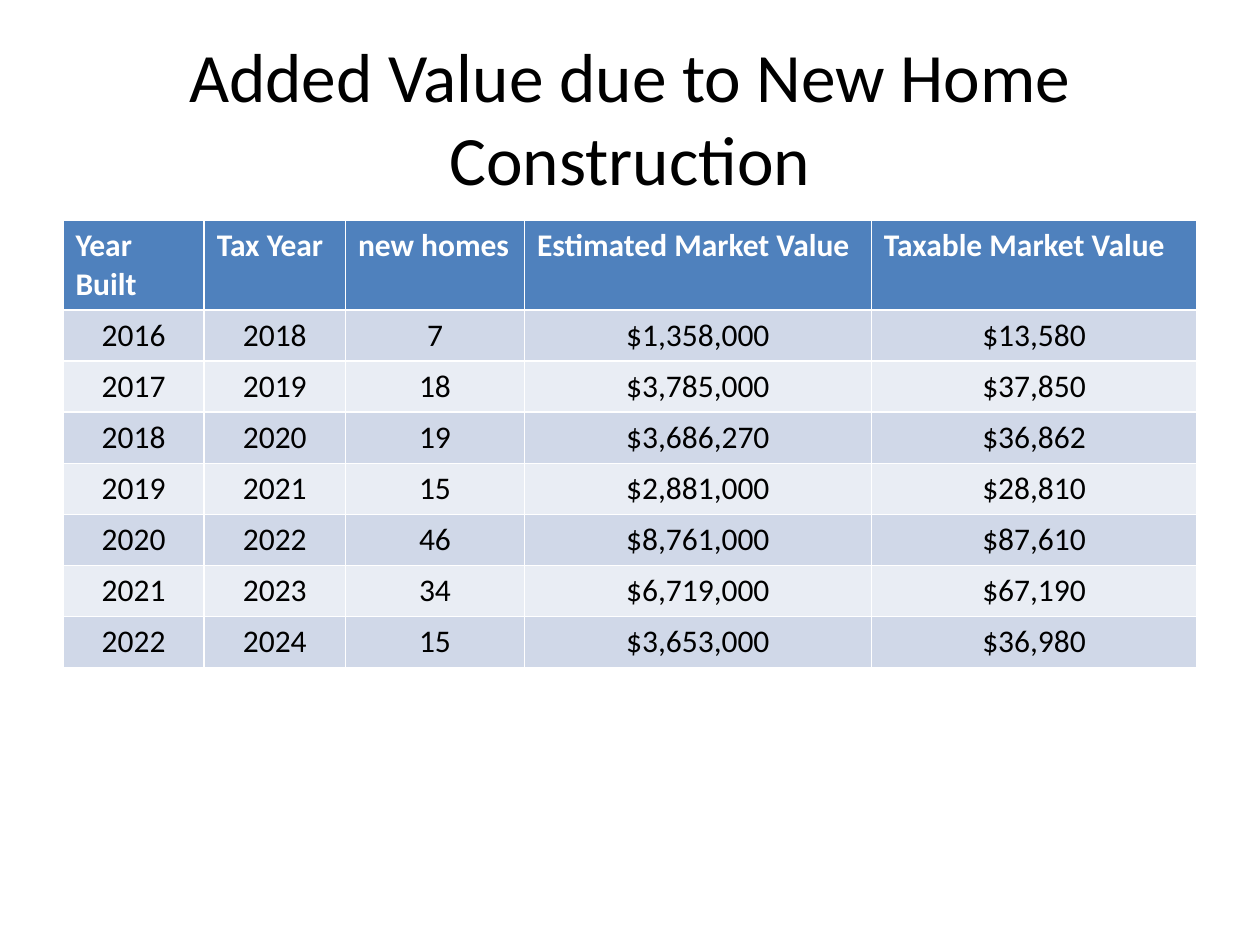
from pptx import Presentation
from pptx.dml.color import RGBColor
from pptx.enum.text import MSO_ANCHOR, PP_ALIGN
from pptx.util import Inches, Pt

LEFT, CENTER = PP_ALIGN.LEFT, PP_ALIGN.CENTER
MIDDLE = MSO_ANCHOR.MIDDLE
BLACK = RGBColor(0x00, 0x00, 0x00)
WHITE = RGBColor(0xFF, 0xFF, 0xFF)
HEADER_BLUE = RGBColor(0x4F, 0x81, 0xBD)
BANDS = (RGBColor(0xD0, 0xD8, 0xE8), RGBColor(0xE9, 0xED, 0xF4))
TITLE_ONLY = 5

HEADINGS = ("Year Built", "Tax Year", "new homes",
            "Estimated Market Value", "Taxable Market Value")
HOMES = (
    ("2016", "2018", "7", "$1,358,000", "$13,580"),
    ("2017", "2019", "18", "$3,785,000", "$37,850"),
    ("2018", "2020", "19", "$3,686,270", "$36,862"),
    ("2019", "2021", "15", "$2,881,000", "$28,810"),
    ("2020", "2022", "46", "$8,761,000", "$87,610"),
    ("2021", "2023", "34", "$6,719,000", "$67,190"),
    ("2022", "2024", "15", "$3,653,000", "$36,980"),
)
COLUMN_WEIGHTS = (1.12, 1.12, 1.42, 2.75, 2.58)


class SlideBuilder:
    """Hold the deck style and the current slide, and add elements to it."""

    font_name = "Calibri"
    title_size = Pt(39.6)
    table_size = Pt(18)

    def __init__(self, width, height):
        """Start a deck of the given size with one title-only slide."""
        self.deck = Presentation()
        self.deck.slide_width, self.deck.slide_height = width, height
        self.page = self.deck.slides.add_slide(self.deck.slide_layouts[TITLE_ONLY])

    def area(self, left, top, width, height):
        """Turn shares of the slide's size into lengths."""
        across, down = self.deck.slide_width, self.deck.slide_height
        return (round(left * across), round(top * down),
                round(width * across), round(height * down))

    def set_text(self, frame, text, size, color, align, bold=False):
        """Put one styled paragraph into a text frame."""
        frame.text = text
        para = frame.paragraphs[0]
        para.alignment = align
        font = para.runs[0].font
        font.name, font.size, font.bold = self.font_name, size, bold
        font.color.rgb = color

    def title(self, text, *shares):
        """Place and fill the title placeholder."""
        box = self.page.shapes.title
        box.left, box.top, box.width, box.height = self.area(*shares)
        box.text_frame.word_wrap = True
        box.text_frame.vertical_anchor = MIDDLE
        self.set_text(box.text_frame, text, self.title_size, BLACK, CENTER)

    def table(self, headings, records, weights, *shares):
        """Add a table with a coloured heading row and banded records."""
        rows = (headings, *records)
        area = self.area(*shares)
        grid = self.page.shapes.add_table(len(rows), len(headings), *area).table
        for column, weight in zip(grid.columns, weights):
            column.width = round(area[2] * weight / sum(weights))
        for row_index, values in enumerate(rows):
            is_heading = row_index == 0
            fill = HEADER_BLUE if is_heading else BANDS[(row_index - 1) % 2]
            color, align = (WHITE, LEFT) if is_heading else (BLACK, CENTER)
            for column_index, value in enumerate(values):
                cell = grid.cell(row_index, column_index)
                cell.fill.solid()
                cell.fill.fore_color.rgb = fill
                self.set_text(cell.text_frame, value, self.table_size,
                              color, align, is_heading)


def main():
    """Build and save the slide on new home construction."""
    builder = SlideBuilder(Inches(10), Inches(7.5))
    builder.title("Added Value due to New Home Construction",
                  0.05, 0.04, 0.9, 1 / 6)
    builder.table(HEADINGS, HOMES, COLUMN_WEIGHTS, 0.05, 7 / 30, 0.9, 0.43)
    builder.deck.save("out.pptx")


if __name__ == "__main__":
    main()
